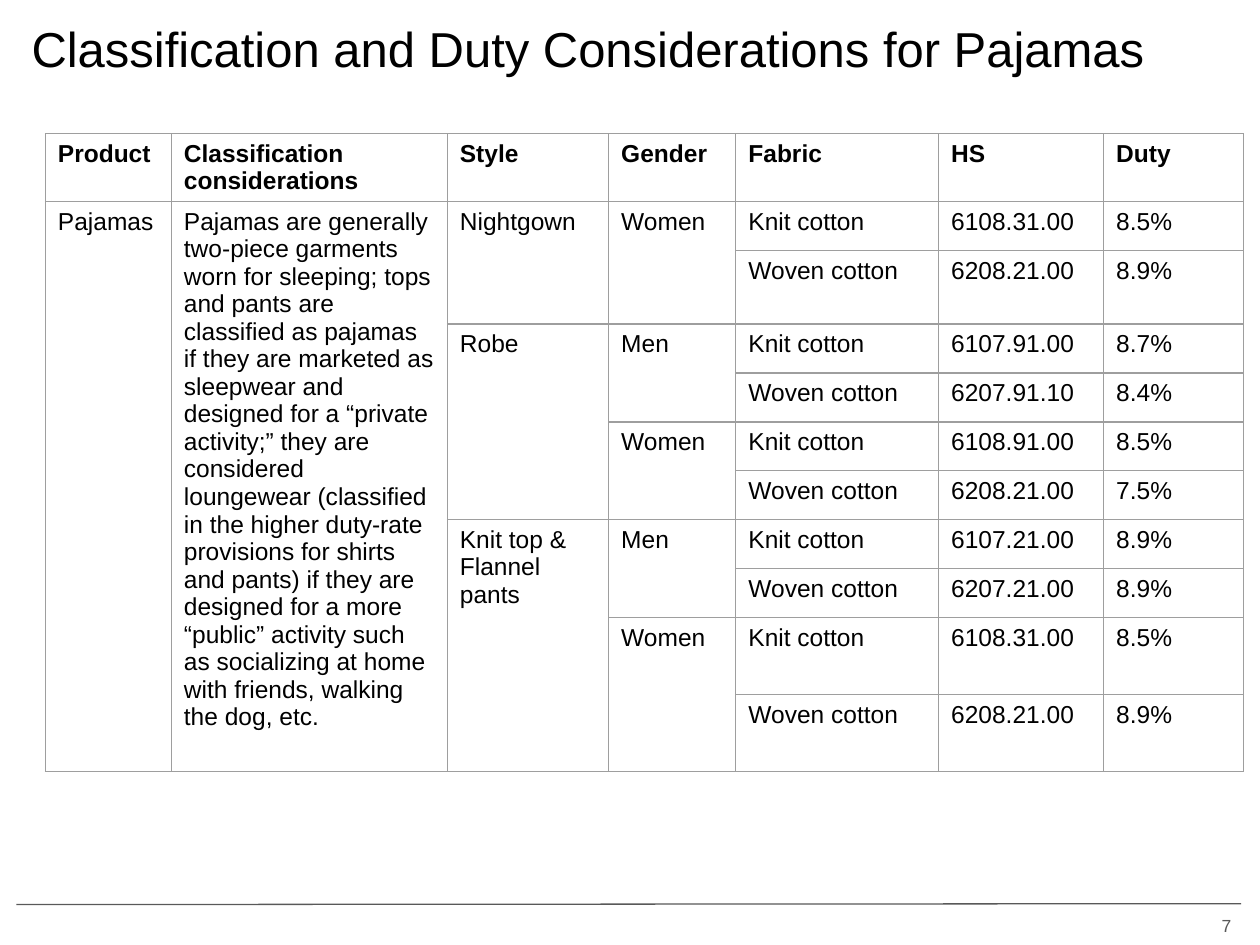
import dataclasses

import lxml.etree
import pptx
import pptx.dml.color
import pptx.enum.shapes
import pptx.enum.text
import pptx.oxml.ns
import pptx.util

Pt = pptx.util.Pt
ALIGN = pptx.enum.text.PP_ALIGN
ANCHOR = pptx.enum.text.MSO_ANCHOR


@dataclasses.dataclass(frozen=True)
class Theme:
    """Colours, type sizes and line width of the slide."""
    font: str = "Arial"
    ink: str = "000000"
    muted: str = "595959"
    grid: str = "9E9E9E"
    title_size: int = 28
    table_size: int = 14
    number_size: int = 10
    line_width: float = 0.75


THEME = Theme()
HEADINGS = ["Product", "Classification considerations", "Style", "Gender",
            "Fabric", "HS", "Duty"]
CONSIDERATIONS = (
    "Pajamas are generally two-piece garments worn for sleeping; tops and pants "
    "are classified as pajamas if they are marketed as sleepwear and designed for "
    "a “private activity;” they are considered loungewear (classified in the higher "
    "duty-rate provisions for shirts and pants) if they are designed for a more "
    "“public” activity such as socializing at home with friends, walking the dog, etc.")
STYLES = [
    ("Nightgown", [("Women", [("6108.31.00", "8.5%"), ("6208.21.00", "8.9%")])]),
    ("Robe", [("Men", [("6107.91.00", "8.7%"), ("6207.91.10", "8.4%")]),
              ("Women", [("6108.91.00", "8.5%"), ("6208.21.00", "7.5%")])]),
    ("Knit top &\nFlannel pants",
     [("Men", [("6107.21.00", "8.9%"), ("6207.21.00", "8.9%")]),
      ("Women", [("6108.31.00", "8.5%"), ("6208.21.00", "8.9%")])]),
]
FABRICS = ["Knit cotton", "Woven cotton"]
COLUMN_WIDTHS = [72, 157.7, 92.2, 72.7, 115.9, 94.3, 79.9]
ROW_HEIGHTS = [38.7, 28, 42] + [28] * 6 + [43.8] * 2


def write(frame, text, size, color=THEME.ink, bold=False, align=ALIGN.LEFT):
    """Fill a text frame with one paragraph for each line of text."""
    frame.text = text
    for para in frame.paragraphs:
        para.alignment = align
        for span in para.runs:
            span.font.name = THEME.font
            span.font.size = Pt(size)
            span.font.bold = bold
            span.font.color.rgb = pptx.dml.color.RGBColor.from_string(color)


def set_frame(frame, anchor):
    """Give a text frame even margins, wrapping and an anchor."""
    frame.word_wrap = True
    frame.auto_size = pptx.enum.text.MSO_AUTO_SIZE.NONE
    frame.vertical_anchor = anchor
    frame.margin_left = frame.margin_right = Pt(7.2)
    frame.margin_top = frame.margin_bottom = Pt(7.2)


def add_title(page, left, top, width, height):
    """Place the slide title in its box."""
    title = page.shapes.title
    title.left, title.top, title.width, title.height = map(
        Pt, (left, top, width, height))
    set_frame(title.text_frame, ANCHOR.TOP)
    write(title.text_frame, "Classification and Duty Considerations for Pajamas",
          THEME.title_size)


def set_borders(cell):
    """Draw a thin line on each side of a table cell."""
    properties = cell._tc.get_or_add_tcPr()
    name = pptx.oxml.ns.qn
    for side in ("a:lnL", "a:lnR", "a:lnT", "a:lnB"):
        line = lxml.etree.SubElement(
            properties, name(side), w=str(int(Pt(THEME.line_width))))
        fill = lxml.etree.SubElement(line, name("a:solidFill"))
        lxml.etree.SubElement(fill, name("a:srgbClr"), val=THEME.grid)


def fill_span(table, row, column, text, rows=1):
    """Write a cell that reaches down over a number of rows."""
    cell = table.cell(row, column)
    if rows > 1:
        cell.merge(table.cell(row + rows - 1, column))
    write(cell.text_frame, text, THEME.table_size, bold=row == 0)


def add_duty_table(page, left, top, width, height):
    """Place the duty table, scaling its columns and rows to the box."""
    table = page.shapes.add_table(
        len(ROW_HEIGHTS), len(COLUMN_WIDTHS),
        Pt(left), Pt(top), Pt(width), Pt(height)).table
    table.first_row = table.horz_banding = False
    for column, share in zip(table.columns, COLUMN_WIDTHS):
        column.width = Pt(width * share / sum(COLUMN_WIDTHS))
    for row, share in zip(table.rows, ROW_HEIGHTS):
        row.height = Pt(height * share / sum(ROW_HEIGHTS))
    for cell in table.iter_cells():
        set_borders(cell)
        cell.fill.background()

    for column, heading in enumerate(HEADINGS):
        fill_span(table, 0, column, heading)
    body_rows = len(ROW_HEIGHTS) - 1
    fill_span(table, 1, 0, "Pajamas", body_rows)
    fill_span(table, 1, 1, CONSIDERATIONS, body_rows)
    row = 1
    for style, genders in STYLES:
        fill_span(table, row, 2, style, len(genders) * len(FABRICS))
        for gender, duties in genders:
            fill_span(table, row, 3, gender, len(FABRICS))
            for fabric, (code, duty) in zip(FABRICS, duties):
                for column, text in enumerate((fabric, code, duty), start=4):
                    fill_span(table, row, column, text)
                row += 1


def add_footer(page, left, top, width, height):
    """Place the footer rule and the page number at its right end."""
    rule = page.shapes.add_connector(
        pptx.enum.shapes.MSO_CONNECTOR.STRAIGHT,
        Pt(left), Pt(top + 9), Pt(left + width - 1.5), Pt(top + 8.5))
    rule.line.color.rgb = pptx.dml.color.RGBColor.from_string(THEME.muted)
    rule.line.width = Pt(THEME.line_width)
    lxml.etree.SubElement(rule._element.spPr, pptx.oxml.ns.qn("a:effectLst"))
    number_width = 43.2
    number = page.shapes.add_textbox(
        Pt(left + width - number_width), Pt(top), Pt(number_width), Pt(height))
    set_frame(number.text_frame, ANCHOR.MIDDLE)
    write(number.text_frame, "7", THEME.number_size, color=THEME.muted,
          align=ALIGN.RIGHT)


def main():
    """Build the slide and save it."""
    deck = pptx.Presentation()
    deck.slide_width, deck.slide_height = Pt(720), Pt(540)
    page = deck.slides.add_slide(deck.slide_layouts.get_by_name("Title Only"))
    add_footer(page, left=9.4, top=507.9, width=701.3, height=41.3)
    add_title(page, left=10.8, top=3.6, width=684.7, height=67)
    add_duty_table(page, left=25.9, top=76.5, width=684.7, height=364.3)
    deck.save("out.pptx")


if __name__ == "__main__":
    main()
